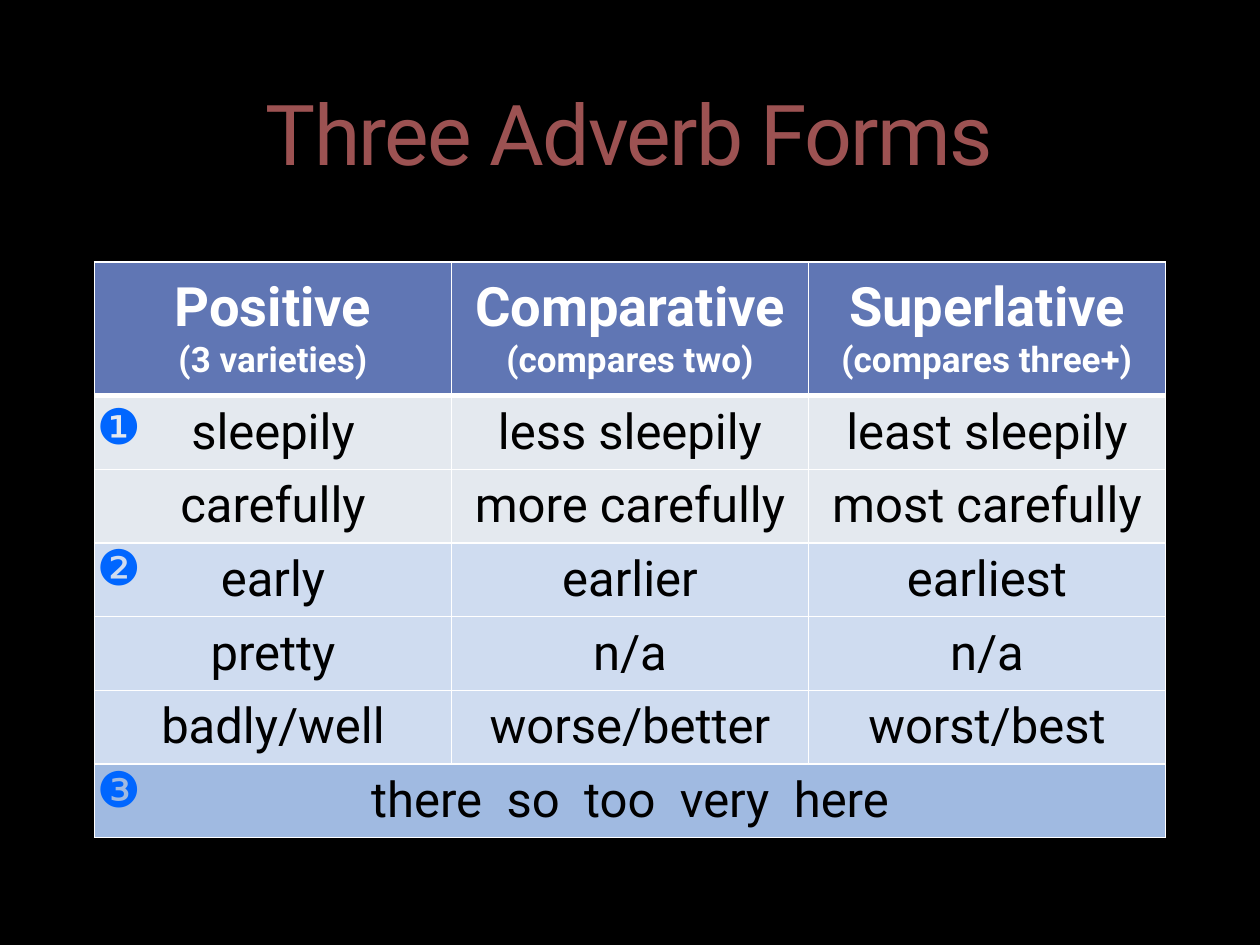
from lxml.etree import SubElement as Sub, Element
from pptx import Presentation as Deck
from pptx.dml.color import RGBColor as RGB
from pptx.enum.text import MSO_ANCHOR as Anchor, PP_ALIGN as Align
from pptx.oxml.ns import qn
from pptx.util import Inches, Pt

BLACK = RGB(0, 0, 0)
WHITE = RGB(255, 255, 255)
RED = RGB(0x9C, 0x52, 0x52)
BLUE = RGB(0x00, 0x66, 0xFF)
EDGE = RGB(0x29, 0x4E, 0x85)
HEAD = RGB(0x60, 0x76, 0xB4)
PALE = RGB(0xE4, 0xE9, 0xEF)
LIGHT = RGB(0xCF, 0xDC, 0xF0)
MID = RGB(0xA0, 0xBA, 0xE1)

HEADS = [("Positive", "(3 varieties)"), ("Comparative", "(compares two)"),
         ("Superlative", "(compares three+)")]
FORMS = [
    (PALE, ["sleepily", "less sleepily", "least sleepily"]),
    (PALE, ["carefully", "more carefully", "most carefully"]),
    (LIGHT, ["early", "earlier", "earliest"]),
    (LIGHT, ["pretty", "n/a", "n/a"]),
    (LIGHT, ["badly/well", "worse/better", "worst/best"]),
]
WORDS = "there so too very here"
MARKS = [("❶", 3.09), ("❷", 4.21), ("❸", 5.97)]


class Page:
    """Hold the text style and the current slide, and draw each kind of element."""

    def __init__(self, deck):
        self.slide = deck.slides.add_slide(deck.slide_layouts[6])
        fill = self.slide.background.fill
        fill.solid()
        fill.fore_color.rgb = BLACK
        self.big = {"name": "Roboto", "size": Pt(31), "bold": True}
        self.small = {**self.big, "size": Pt(20)}
        self.body = {"name": "Roboto", "size": Pt(28), "bold": False}

    def run(self, para, text, style, color):
        run = para.add_run()
        run.text = text
        for key, value in style.items():
            setattr(run.font, key, value)
        run.font.color.rgb = color
        return run.font._element.rPr if hasattr(run.font._element, "rPr") else run._r.get_or_add_rPr()

    def line(self, tag, color, width):
        line = Element(qn(tag), w=str(Pt(width)))
        fill = Sub(line, qn("a:solidFill"))
        Sub(fill, qn("a:srgbClr"), val=str(color))
        return line

    def text(self, box, text, style, color, align, anchor):
        shape = self.slide.shapes.add_textbox(*map(Inches, box))
        frame = shape.text_frame
        frame.word_wrap = True
        frame.vertical_anchor = anchor
        para = frame.paragraphs[0]
        para.alignment = align
        return self.run(para, text, style, color)

    def title(self, text):
        style = {**self.body, "size": Pt(48)}
        props = self.text((0.33, 0.17, 9.33, 1.33), text, style, RED,
                          Align.CENTER, Anchor.BOTTOM)
        props.set("spc", "-100")
        line = self.line("a:ln", EDGE, 0.25)
        Sub(line[0][0], qn("a:alpha"), val="25000")
        props.insert(0, line)

    def mark(self, text, top):
        self.text((0.67, top, 0.67, 0.57), text, self.body, BLUE,
                  Align.LEFT, Anchor.TOP)

    def cell(self, cell, fill, top, low):
        cell.fill.solid()
        cell.fill.fore_color.rgb = fill
        cell.vertical_anchor = Anchor.MIDDLE
        props = cell._tc.get_or_add_tcPr()
        for spot, (side, width) in enumerate(zip("LRTB", (1, 1, top, low))):
            props.insert(spot, self.line("a:ln" + side, WHITE, width))
        para = cell.text_frame.paragraphs[0]
        para.alignment = Align.CENTER
        return para

    def table(self):
        count = len(FORMS) + 2
        box = map(Inches, (0.75, 2.08, 8.5, 4.57))
        table = self.slide.shapes.add_table(count, 3, *box).table
        for row in table.rows:
            row.height = Inches((4.57 - 1.06) / (count - 1))
        table.rows[0].height = Inches(1.06)
        for col, (name, note) in enumerate(HEADS):
            cell = table.cell(0, col)
            self.run(self.cell(cell, HEAD, 1, 3), name, self.big, WHITE)
            para = cell.text_frame.add_paragraph()
            para.alignment = Align.CENTER
            self.run(para, note, self.small, WHITE)
        for row, (fill, texts) in enumerate(FORMS, 1):
            for col, text in enumerate(texts):
                para = self.cell(table.cell(row, col), fill, 3 if row == 1 else 1, 1)
                self.run(para, text, self.body, BLACK)
        last = [self.cell(table.cell(count - 1, col), MID, 1, 1) for col in range(3)]
        table.cell(count - 1, 0).merge(table.cell(count - 1, 2))
        for spot, word in enumerate(WORDS.split()):
            if spot:
                self.run(last[0], " ", self.body, BLACK).set("spc", "700")
            self.run(last[0], word, self.body, BLACK)


def main():
    deck = Deck()
    deck.slide_width, deck.slide_height = Inches(10), Inches(7.5)
    page = Page(deck)
    page.table()
    page.title("Three Adverb Forms")
    for text, top in MARKS:
        page.mark(text, top)
    deck.save("out.pptx")


if __name__ == "__main__":
    main()
